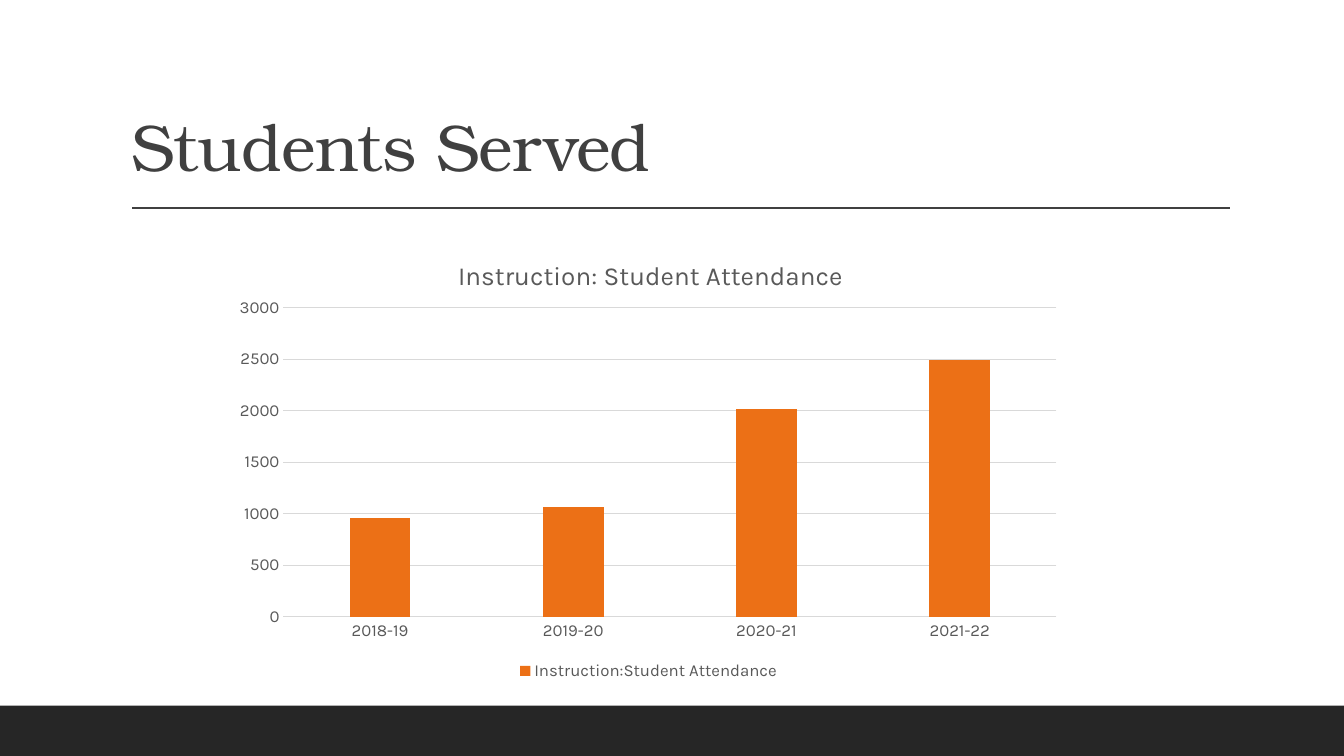
from dataclasses import dataclass
from lxml.etree import SubElement
from pptx import Presentation
from pptx.chart.data import CategoryChartData
from pptx.dml.color import RGBColor
from pptx.enum.chart import XL_CHART_TYPE, XL_LEGEND_POSITION, XL_TICK_MARK
from pptx.enum.shapes import MSO_CONNECTOR, MSO_SHAPE
from pptx.enum.text import MSO_ANCHOR, MSO_AUTO_SIZE, PP_ALIGN
from pptx.oxml import parse_xml
from pptx.oxml.ns import nsdecls, qn
from pptx.util import Inches, Pt


@dataclass(frozen=True)
class Theme:
    head: str = "TeX Gyre Bonum"
    body: str = "Karla"
    dark: str = "262626"
    ink: str = "404040"
    label: str = "595959"
    grid: str = "D9D9D9"
    bar: str = "EC7016"
    big: float = 47
    mid: float = 18.6
    small: float = 12
    thin: float = 0.75
    rule: float = 1


THEME = Theme()
WIDE, HIGH = Inches(13.33), Inches(7.5)
YEARS = {"2018-19": 960, "2019-20": 1060, "2020-21": 2020, "2021-22": 2490}


def assign(item, values):
    for name, value in values.items():
        setattr(item, name, value)


def share(left, top, width, height):
    return [round(part * side) for part, side in
            zip((left, top, width, height), (WIDE, HIGH, WIDE, HIGH))]


def style(font, face, size, color):
    assign(font, {"name": face, "size": Pt(size), "bold": False})
    font.color.rgb = RGBColor.from_string(color)


def stroke(line, color, width):
    line.color.rgb = RGBColor.from_string(color)
    line.width = Pt(width)


def place(parent, index, **marks):
    for old in parent.findall(qn("c:layout")):
        parent.remove(old)
    body = "".join(f'<c:{name} val="{value}"/>' for name, value in marks.items())
    parent.insert(index, parse_xml(
        f'<c:layout {nsdecls("c")}><c:manualLayout>{body}</c:manualLayout></c:layout>'))


def footer(slide, box):
    band = slide.shapes.add_shape(MSO_SHAPE.RECTANGLE, *box)
    band.shadow.inherit = False
    band.fill.solid()
    band.fill.fore_color.rgb = RGBColor.from_string(THEME.dark)
    band.line.fill.background()


def header(slide, box):
    left, top, width, height = box
    title = slide.shapes.title
    assign(title, {"left": left, "top": top, "width": width, "height": height})
    frame = title.text_frame
    assign(frame, {"text": "Students Served", "word_wrap": True,
                   "vertical_anchor": MSO_ANCHOR.BOTTOM,
                   "auto_size": MSO_AUTO_SIZE.NONE})
    line = frame.paragraphs[0]
    assign(line, {"alignment": PP_ALIGN.LEFT, "line_spacing": 0.9})
    font = line.runs[0].font
    style(font, THEME.head, THEME.big, THEME.ink)
    line.runs[0]._r.get_or_add_rPr().set("spc", "-50")
    start, level = left + width // 100, top + round(height * 1.11)
    rule = slide.shapes.add_connector(
        MSO_CONNECTOR.STRAIGHT, start, level, left + width, level)
    stroke(rule.line, THEME.ink, THEME.rule)
    SubElement(rule._element.spPr, qn("a:effectLst"))


def graph(slide, box):
    data = CategoryChartData()
    data.categories = list(YEARS)
    data.add_series("Instruction:Student Attendance", list(YEARS.values()))
    chart = slide.shapes.add_chart(XL_CHART_TYPE.COLUMN_CLUSTERED, *box, data).chart
    style(chart.font, THEME.body, THEME.small, THEME.label)
    assign(chart, {"has_title": True, "has_legend": True})
    frame = chart.chart_title.text_frame
    frame.text = "Instruction: Student Attendance"
    style(frame.paragraphs[0].runs[0].font, THEME.body, THEME.mid, THEME.label)
    place(chart.chart_title._element, 1, xMode="edge", yMode="edge", x=0.27, y=0.05)
    assign(chart.legend, {"position": XL_LEGEND_POSITION.BOTTOM,
                          "include_in_layout": False})
    plot = chart.plots[0]
    assign(plot, {"gap_width": 219, "overlap": -27, "vary_by_categories": False})
    fill = plot.series[0].format.fill
    fill.solid()
    fill.fore_color.rgb = RGBColor.from_string(THEME.bar)
    years, count = chart.category_axis, chart.value_axis
    for axis in (years, count):
        assign(axis, {"major_tick_mark": XL_TICK_MARK.NONE,
                      "minor_tick_mark": XL_TICK_MARK.NONE})
        style(axis.tick_labels.font, THEME.body, THEME.small, THEME.label)
    assign(count, {"minimum_scale": 0, "maximum_scale": 3000, "major_unit": 500})
    count.format.line.fill.background()
    for line in (years.format.line, count.major_gridlines.format.line):
        stroke(line, THEME.grid, THEME.thin)
    place(chart._chartSpace.chart.plotArea, 0, layoutTarget="inner",
          xMode="edge", yMode="edge", x=0.07, y=0.17, w=0.91, h=0.68)


def main():
    deck = Presentation()
    assign(deck, {"slide_width": WIDE, "slide_height": HIGH})
    slide = deck.slides.add_slide(deck.slide_layouts[5])
    footer(slide, share(0, 14 / 15, 1, 1 / 15))
    header(slide, share(0.09, 0.04, 0.825, 0.212))
    graph(slide, share(1 / 6, 0.305, 0.632, 0.601))
    deck.save("out.pptx")


if __name__ == "__main__":
    main()
